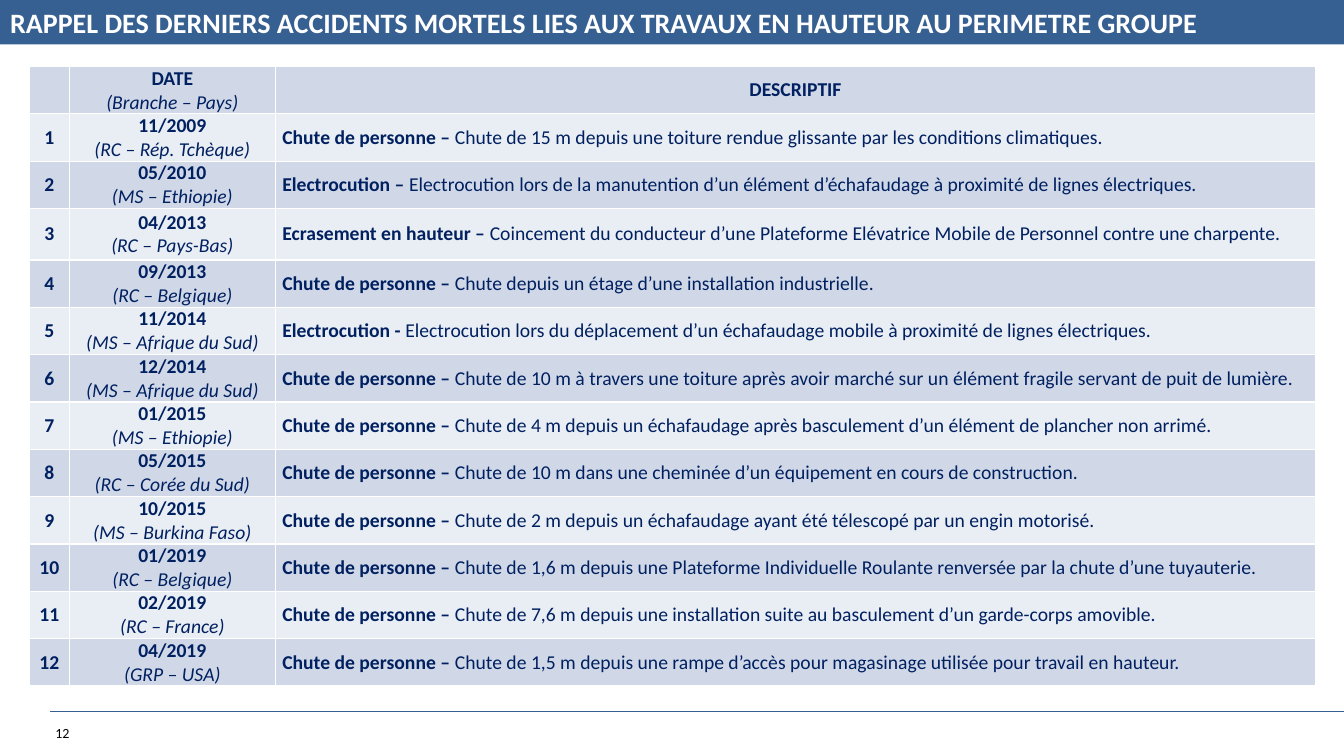
"""Build the slide listing fatal accidents during work at height."""
import dataclasses

import lxml.etree
import pptx
import pptx.dml.color
import pptx.enum.shapes
import pptx.enum.text
import pptx.oxml
import pptx.oxml.ns
import pptx.util

TITLE = "RAPPEL DES DERNIERS ACCIDENTS MORTELS LIES AUX TRAVAUX EN HAUTEUR AU PERIMETRE GROUPE"
PAGE = "12"
HEAD = ("DATE", "(Branche – Pays)", "DESCRIPTIF")
FALL = "Chute de personne – "
CASES = [
    ("11/2009", "RC – Rép. Tchèque", FALL,
     "Chute de 15 m depuis une toiture rendue glissante par les conditions climatiques."),
    ("05/2010", "MS – Ethiopie", "Electrocution – ",
     "Electrocution lors de la manutention d’un élément d’échafaudage à proximité de lignes électriques."),
    ("04/2013", "RC – Pays-Bas", "Ecrasement en hauteur – ",
     "Coincement du conducteur d’une Plateforme Elévatrice Mobile de Personnel contre une charpente."),
    ("09/2013", "RC – Belgique", FALL,
     "Chute depuis un étage d’une installation industrielle."),
    ("11/2014", "MS – Afrique du Sud", "Electrocution - ",
     "Electrocution lors du déplacement d’un échafaudage mobile à proximité de lignes électriques."),
    ("12/2014", "MS – Afrique du Sud", FALL,
     "Chute de 10 m à travers une toiture après avoir marché sur un élément fragile servant de puit de lumière."),
    ("01/2015", "MS – Ethiopie", FALL,
     "Chute de 4 m depuis un échafaudage après basculement d’un élément de plancher non arrimé."),
    ("05/2015", "RC – Corée du Sud", FALL,
     "Chute de 10 m dans une cheminée d’un équipement en cours de construction."),
    ("10/2015", "MS – Burkina Faso", FALL,
     "Chute de 2 m depuis un échafaudage ayant été télescopé par un engin motorisé."),
    ("01/2019", "RC – Belgique", FALL,
     "Chute de 1,6 m depuis une Plateforme Individuelle Roulante renversée par la chute d’une tuyauterie."),
    ("02/2019", "RC – France", FALL,
     "Chute de 7,6 m depuis une installation suite au basculement d’un garde-corps amovible."),
    ("04/2019", "GRP – USA", FALL,
     "Chute de 1,5 m depuis une rampe d’accès pour magasinage utilisée pour travail en hauteur."),
]
COLS = (0.4, 2.04, 10.32)
ROWS = [0.51 if row == 3 else 0.47 for row in range(len(CASES) + 1)]
WIDE = 13.33

Inches = pptx.util.Inches
ALIGN = pptx.enum.text.PP_ALIGN
MIDDLE = pptx.enum.text.MSO_ANCHOR.MIDDLE


@dataclasses.dataclass(frozen=True)
class Theme:
    """Hold colours, font and type sizes."""
    font: str = "Calibri"
    blue: str = "376092"
    navy: str = "002060"
    white: str = "FFFFFF"
    black: str = "000000"
    bands: tuple = ("D0D8E8", "E9EDF4")
    title: int = 20
    cell: int = 14
    page: int = 10


THEME = Theme()


def paint(fill, color):
    """Give a fill one solid colour."""
    fill.solid()
    fill.fore_color.rgb = pptx.dml.color.RGBColor.from_string(color)


def write(para, text, size, color, bold=False, italic=False):
    """Add one styled run."""
    run = para.add_run()
    run.text = text
    font = run.font
    font.name, font.size = THEME.font, pptx.util.Pt(size)
    font.bold, font.italic = bold, italic
    font.color.rgb = pptx.dml.color.RGBColor.from_string(color)


def border(cell):
    """Draw white lines on all sides of a cell."""
    props = cell._tc.get_or_add_tcPr()
    for side in ("lnL", "lnR", "lnT", "lnB"):
        props.append(pptx.oxml.parse_xml(
            f'<a:{side} {pptx.oxml.ns.nsdecls("a")} w="12700"><a:solidFill>'
            f'<a:srgbClr val="{THEME.white}"/></a:solidFill></a:{side}>'))


def fill_cell(cell, lines, align, band):
    """Format a cell and write its lines of (text, bold, italic) runs."""
    border(cell)
    paint(cell.fill, band)
    cell.vertical_anchor = MIDDLE
    cell.margin_left = cell.margin_right = Inches(0.07)
    cell.margin_top = cell.margin_bottom = 0
    frame = cell.text_frame
    for index, runs in enumerate(lines):
        para = frame.add_paragraph() if index else frame.paragraphs[0]
        para.alignment = align
        for text, bold, italic in runs:
            write(para, text, THEME.cell, THEME.navy, bold, italic)


def add_title(slide):
    """Place the title on its blue bar."""
    title = slide.shapes.title
    title.left, title.top = 0, 0
    title.width, title.height = Inches(12.42), Inches(0.44)
    bar = slide.shapes.add_shape(pptx.enum.shapes.MSO_SHAPE.RECTANGLE,
                                 0, 0, Inches(WIDE), Inches(0.44))
    bar.shadow.inherit = False
    paint(bar.fill, THEME.blue)
    bar.line.fill.background()
    title.element.addprevious(bar.element)
    frame = title.text_frame
    frame.auto_size = pptx.enum.text.MSO_AUTO_SIZE.NONE
    frame.vertical_anchor = MIDDLE
    para = frame.paragraphs[0]
    para.alignment = ALIGN.LEFT
    write(para, TITLE, THEME.title, THEME.white, bold=True)


def add_foot(slide):
    """Draw the bottom rule and the page number."""
    rule = slide.shapes.add_connector(pptx.enum.shapes.MSO_CONNECTOR.STRAIGHT,
                                      Inches(0.5), Inches(7.06), Inches(WIDE), Inches(7.06))
    rule.line.width = pptx.util.Pt(0.75)
    paint(rule.line.fill, THEME.blue)
    lxml.etree.SubElement(rule.element.spPr, pptx.oxml.ns.qn("a:effectLst"))
    box = slide.shapes.add_textbox(Inches(0.45), Inches(7.14), Inches(0.71), Inches(0.27))
    box.text_frame.word_wrap = True
    write(box.text_frame.paragraphs[0], PAGE, THEME.page, THEME.black)


def add_cases(slide):
    """Build the accident table."""
    table = slide.shapes.add_table(len(ROWS), len(COLS), Inches(0.29), Inches(0.66),
                                   Inches(sum(COLS)), Inches(sum(ROWS))).table
    table.first_row = table.horz_banding = False
    for column, width in zip(table.columns, COLS):
        column.width = Inches(width)
    for row, height in zip(table.rows, ROWS):
        row.height = Inches(height)
    date, place, label = HEAD
    grid = [([], [[(date, True, False)], [(place, False, True)]], [[(label, True, False)]])]
    for number, (date, place, kind, text) in enumerate(CASES, 1):
        grid.append(([[(str(number), True, False)]],
                     [[(date, True, False)], [(f"({place})", False, True)]],
                     [[(kind, True, False), (text, False, False)]]))
    for row, cells in enumerate(grid):
        for col, lines in enumerate(cells):
            align = ALIGN.LEFT if row and col == 2 else ALIGN.CENTER
            fill_cell(table.cell(row, col), lines, align, THEME.bands[row % 2])


def main():
    """Assemble and save the slide."""
    deck = pptx.Presentation()
    deck.slide_width, deck.slide_height = Inches(WIDE), Inches(7.5)
    slide = deck.slides.add_slide(deck.slide_layouts[5])
    add_title(slide)
    add_foot(slide)
    add_cases(slide)
    deck.save("out.pptx")


if __name__ == "__main__":
    main()
